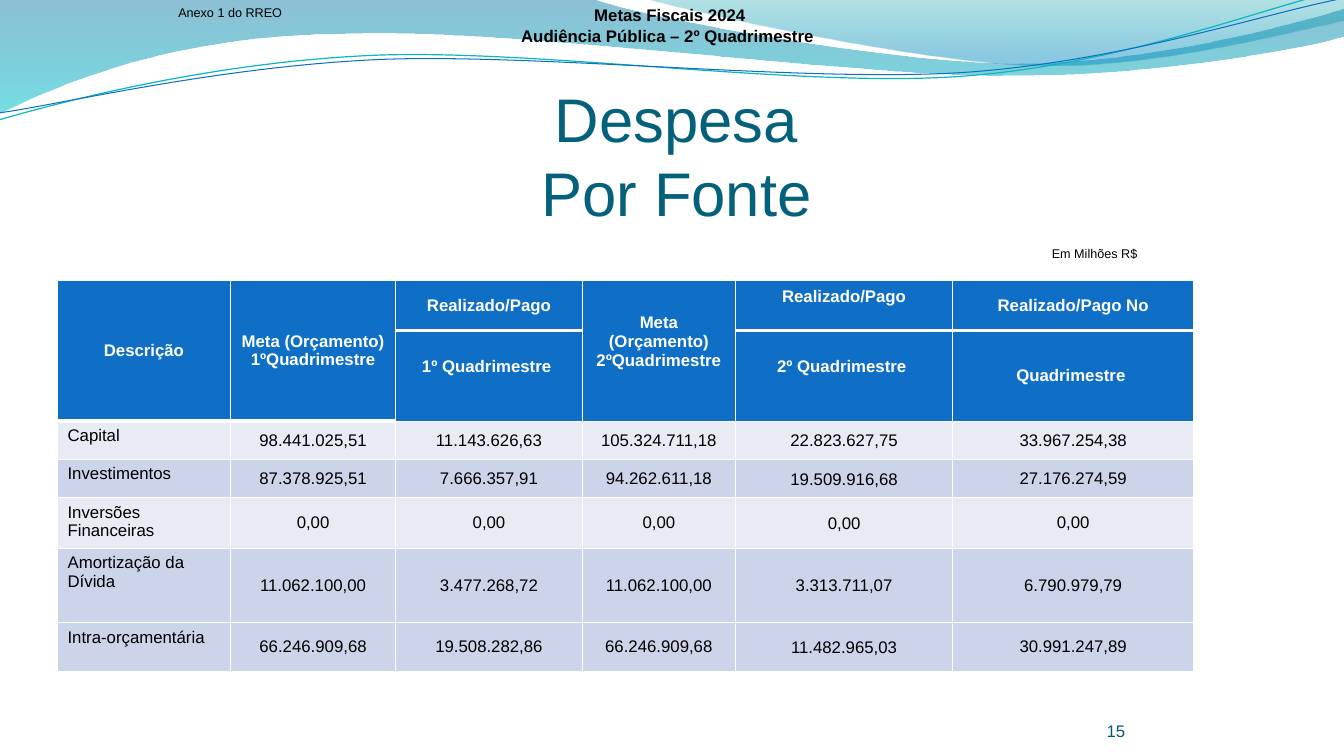
from dataclasses import dataclass

from lxml.etree import SubElement as Sub
from pptx import Presentation
from pptx.dml.color import RGBColor as Rgb
from pptx.enum.text import MSO_ANCHOR as Anchor, PP_ALIGN as Align
from pptx.oxml.ns import qn
from pptx.util import Inches, Pt

WIDE, HIGH = Inches(13.33), Inches(7.5)


@dataclass(frozen=True)
class Theme:
    font: str = "Arial"
    title: str = "04617B"
    page: str = "035C75"
    ink: str = "000000"
    white: str = "FFFFFF"
    head: str = "0F6FC6"
    teal: str = "09B7BF"
    light: str = "E7EBF4"
    dark: str = "CCD4EA"
    big: int = 44
    body: int = 12
    small: int = 9
    thin: float = 0.96
    thick: float = 3


THEME = Theme()

# Waves: start point, then lines (2 numbers) or curves (6), in % of the slide
BAND = ((0, 0), (
    (44.04, -0.13), (47.56, 2.27, 66.39, 8.4, 75.84, 8.4),
    (85.3, 8.4, 95.87, 3.47, 100, 1.2), (100.15, 4.8),
    (98.35, 5.87, 87.02, 10.13, 74.57, 10),
    (62.19, 10, 38.18, 3.73, 25.73, 4.53),
    (12.9, 4.67, 4.58, 11.07, -0.08, 15.07)))
CREST = ((47.94, -0.13), (
    (50.94, 1.47, 68.19, 8.27, 76.89, 8.67),
    (85.6, 9.2, 95.87, 4.27, 100, 2.8), (100, 0)))
UPPER = ((-0.23, 11.68), (
    (4.73, 9.55, 15.83, 5.41, 27.68, 5.47),
    (39.61, 5.53, 59.15, 12.4, 71.19, 11.92),
    (83.2, 11.47, 94.07, 4.76, 100, 2.85)))
LOWER = ((-0.15, 10.73), (
    (4.65, 9.93, 16.35, 5.97, 28.36, 6.05),
    (40.29, 6.25, 59.64, 11.73, 71.57, 11.4),
    (83.57, 10.95, 94.26, 5.43, 100.23, 3.93)))
TILT = -2.7

# Table: sizes in % of the slide, then the cell texts
COLS = (12.87, 12.3, 13.88, 11.4, 16.17, 17.93)
ROWS = (6.67, 12, 5.07, 5.07, 6.67, 9.87, 6.4)
MERGED = (0, 1, 3)
RAISED = {(0, 3), (0, 4), (1, 2), (1, 4)}
HEAVY = {(0, 2), (0, 4), (0, 5), (1, 0), (1, 1)}
DATA = (
    ("Descrição", "Meta (Orçamento)\n1ºQuadrimestre", "Realizado/Pago",
     "Meta (Orçamento)\n2ºQuadrimestre", "Realizado/Pago", "Realizado/Pago No"),
    ("", "", "1º Quadrimestre ", "", "2º Quadrimestre ", "Quadrimestre "),
    ("Capital", "98.441.025,51", "11.143.626,63", "105.324.711,18",
     "22.823.627,75", "33.967.254,38"),
    ("Investimentos", "87.378.925,51", "7.666.357,91", "94.262.611,18",
     "19.509.916,68", "27.176.274,59"),
    ("Inversões Financeiras",) + ("0,00",) * 5,
    ("Amortização da Dívida", "11.062.100,00", "3.477.268,72",
     "11.062.100,00", "3.313.711,07", "6.790.979,79"),
    ("Intra-orçamentária", "66.246.909,68", "19.508.282,86",
     "66.246.909,68", "11.482.965,03", "30.991.247,89"),
)


def across(share):
    return round(WIDE * share / 100)


def down(share):
    return round(HIGH * share / 100)


def add_wave(slide, wave, close):
    (x, y), steps = wave
    form = slide.shapes.build_freeform(across(x), down(y))
    form.add_line_segments([(across(a), down(b)) for step in steps
                            for a, b in zip(step[::2], step[1::2])], close=close)
    shape = form.convert_to_shape()
    shape.shadow.inherit = False
    # Join each three points of a curve into one Bezier segment
    lines = iter(list(shape._element.iter(qn("a:lnTo"))))
    for step in steps:
        first = next(lines)
        if len(step) == 6:
            first.tag = qn("a:cubicBezTo")
            for line in (next(lines), next(lines)):
                first.append(line[0])
                line.getparent().remove(line)
    return shape


def add_band(slide, wave, angle, stops):
    shape = add_wave(slide, wave, True)
    shape.line.fill.background()
    shape.fill.gradient()
    shape.fill.gradient_angle = angle
    for stop, (place, color, _) in zip(shape.fill.gradient_stops, stops):
        stop.position = place
        stop.color.rgb = Rgb.from_string(color)
    tints = shape._element.spPr.iter(qn("a:srgbClr"))
    for tint, (_, _, alpha) in zip(list(tints), stops):
        Sub(tint, qn("a:alpha"), val=str(alpha * 1000))


def add_curve(slide, wave, color, width):
    shape = add_wave(slide, wave, False)
    shape.rotation = TILT
    shape.fill.background()
    shape.line.color.rgb = Rgb.from_string(color)
    shape.line.width = Pt(width)


def style(frame, size, color, bold=False, align=Align.CENTER):
    for para in frame.paragraphs:
        para.alignment = align
        for run in para.runs:
            font = run.font
            font.name, font.size, font.bold = THEME.font, Pt(size), bold
            font.color.rgb = Rgb.from_string(color)


def add_text(slide, text, box, size, color, bold=False, align=Align.CENTER,
             anchor=Anchor.TOP, pad=(0.1, 0.05, 0.1, 0.05)):
    x, y, w, h = box
    frame = slide.shapes.add_textbox(across(x), down(y), across(w), down(h)).text_frame
    frame.word_wrap = True
    frame.vertical_anchor = anchor
    (frame.margin_left, frame.margin_top,
     frame.margin_right, frame.margin_bottom) = map(Inches, pad)
    frame.text = text
    style(frame, size, color, bold, align)


def add_edge(cell, side, width):
    line = Sub(cell._tc.get_or_add_tcPr(), qn("a:ln" + side), w=str(Pt(width)))
    Sub(Sub(line, qn("a:solidFill")), qn("a:srgbClr"), val=THEME.white)


def fill_cell(cell, row, col, text):
    head = row < 2
    for side in "LRTB":
        spot = {"T": (row - 1, col), "B": (row, col)}.get(side)
        add_edge(cell, side, THEME.thick if spot in HEAVY else THEME.thin)
    back = THEME.head if head else THEME.light if row in (2, 4) else THEME.dark
    cell.fill.solid()
    cell.fill.fore_color.rgb = Rgb.from_string(back)
    label = not head and col == 0
    cell.vertical_anchor = Anchor.TOP if label else Anchor.MIDDLE
    if (row, col) in RAISED:
        cell.margin_bottom = Inches(0.23)
    elif not head and col == 4:
        cell.margin_left = cell.margin_right = cell.margin_top = Inches(0.01)
        cell.margin_bottom = 0
    if text:
        cell.text_frame.text = text
        style(cell.text_frame, THEME.body, THEME.white if head else THEME.ink,
              head, Align.LEFT if label else Align.CENTER)


def add_grid(slide, x, y):
    table = slide.shapes.add_table(len(ROWS), len(COLS), across(x), down(y),
                                   across(sum(COLS)), down(sum(ROWS))).table
    table.first_row = table.horz_banding = False
    for col, share in zip(table.columns, COLS):
        col.width = across(share)
    for row, share in zip(table.rows, ROWS):
        row.height = down(share)
    for r, texts in enumerate(DATA):
        for c, text in enumerate(texts):
            fill_cell(table.cell(r, c), r, c, text)
    for c in MERGED:
        table.cell(0, c).merge(table.cell(1, c))


def main():
    deck = Presentation()
    deck.slide_width, deck.slide_height = WIDE, HIGH
    slide = deck.slides.add_slide(deck.slide_layouts[6])

    # Waves along the top
    add_band(slide, BAND, 270, ((0, "0074A0", 45), (1, "00C4CD", 55)))
    add_band(slide, CREST, 90, ((0.2, "008ABF", 45), (1, "00A0A8", 30)))
    add_curve(slide, UPPER, THEME.teal, 0.85)
    add_curve(slide, LOWER, THEME.head, 0.75)

    # Title and table
    add_text(slide, "Despesa\vPor Fonte", (16.58, 13.6, 67.52, 16.67), THEME.big,
             THEME.title, anchor=Anchor.BOTTOM, pad=(0, 0.05, 0, 0))
    add_grid(slide, 4.28, 37.05)

    # Page number, notes and heading
    add_text(slide, "15", (77.5, 92.67, 6.23, 5.33), THEME.body, THEME.page,
             align=Align.RIGHT, anchor=Anchor.BOTTOM, pad=(0, 0, 0, 0))
    add_text(slide, "Em Milhões R$", (77.3, 31.87, 8.28, 3.33), THEME.small, THEME.ink)
    add_text(slide, "Anexo 1 do RREO", (12.53, 0, 10.2, 3.33), THEME.small,
             THEME.ink, align=Align.LEFT)
    add_text(slide, "Metas Fiscais 2024\nAudiência Pública – 2º Quadrimestre ",
             (37.13, 0, 25.43, 6.67), THEME.body, THEME.ink, bold=True,
             anchor=Anchor.MIDDLE)
    deck.save("out.pptx")


if __name__ == "__main__":
    main()
